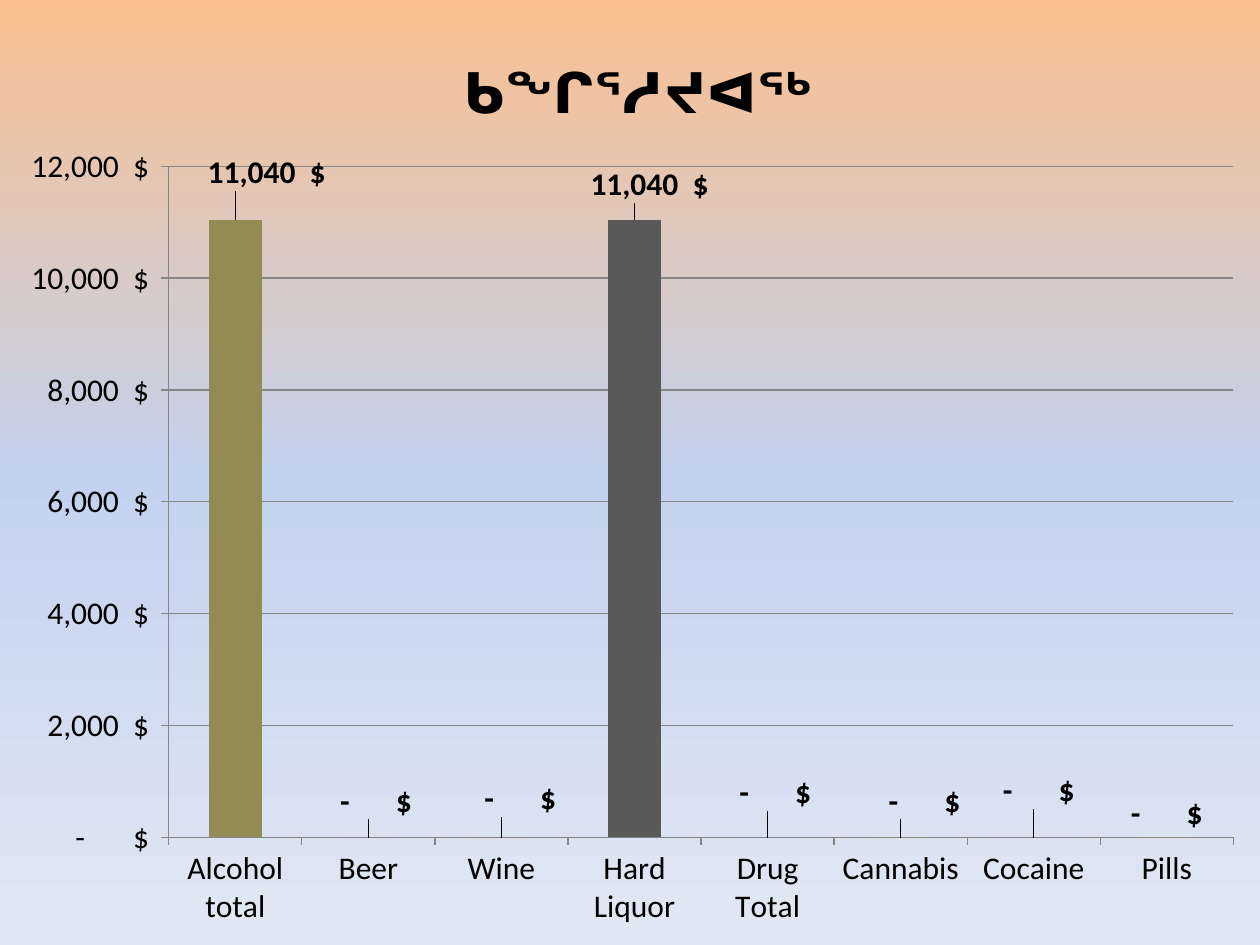
from copy import deepcopy

from lxml import etree
from pptx import Presentation
from pptx.chart.data import CategoryChartData
from pptx.dml.color import RGBColor
from pptx.enum.chart import XL_CHART_TYPE, XL_LABEL_POSITION, XL_TICK_MARK
from pptx.oxml.ns import qn
from pptx.util import Inches, Pt

COLUMNS = XL_CHART_TYPE.COLUMN_CLUSTERED
OUTSIDE_END = XL_LABEL_POSITION.OUTSIDE_END
TICK_OUT = XL_TICK_MARK.OUTSIDE

FONT = "Calibri"
TITLE = "ᑲᖏᕐᓱᔪᐊᖅ"
DOLLARS = (r'_ * #,##0_)\ "$"_ ;_ * \(#,##0\)\ "$"_ ;'
           r'_ * "-"??_)\ "$"_ ;_ @_ ')
COLORS = {
    "text": "000000", "rule": "868686", "default": "4F81BD",
    "top": "FAC090", "middle": "C2D1ED", "bottom": "E1E8F5",
}
BACKGROUND = [(0, "top"), (0.5, "middle"), (1, "bottom")]

# category, dollars, column colour, label shift as a share of the chart
SPENDING = [
    ("Alcohol total", 11040, "948A54", (0.025, -0.025)),
    ("Beer", 0, "604A7B", (0.006, -0.013)),
    ("Wine", 0, "953735", (0.015, -0.016)),
    ("Hard Liquor", 11040, "595959", (0.012, -0.012)),
    ("Drug Total", 0, COLORS["default"], (0.006, -0.022)),
    ("Cannabis", 0, "9BBB59", (0.019, -0.013)),
    ("Cocaine", 0, "8064A2", (0.004, -0.024)),
    ("Pills", 0, "F79646", None),
]
PLOT = {"x": 0.134, "y": 0.176, "w": 0.845, "h": 0.71}
TITLE_PLACE = {"x": 0.36, "y": 0.045}


def rgb(name):
    return RGBColor.from_string(COLORS.get(name, name))


def format_font(font, size=18, bold=False):
    font.name, font.size, font.bold = FONT, Pt(size), bold
    font.color.rgb = rgb("text")


def manual_layout(modes=(), **shares):
    """Return a c:layout element with the given modes and shares."""
    layout = etree.Element(qn("c:layout"))
    manual = etree.SubElement(layout, qn("c:manualLayout"))
    for tag, value in [*modes, *shares.items()]:
        etree.SubElement(manual, qn(f"c:{tag}")).set("val", str(value))
    return layout


def place(parent, layout, after=None):
    """Replace the layout of a chart part, keeping the schema order."""
    for old in parent.findall(qn("c:layout")):
        parent.remove(old)
    if after is None:
        parent.insert(0, layout)
    else:
        parent.find(qn(after)).addnext(layout)


def paint_background(slide):
    fill = slide.background.fill
    fill.gradient()
    fill.gradient_angle = 270
    stop_list = slide.element.xpath(".//a:gsLst")[0]
    stop_list.insert(1, deepcopy(stop_list[0]))
    for stop, (position, color) in zip(fill.gradient_stops, BACKGROUND):
        stop.position = position
        stop.color.rgb = rgb(color)


def format_axes(chart):
    for axis in (chart.category_axis, chart.value_axis):
        axis.major_tick_mark = TICK_OUT
        axis.format.line.color.rgb = rgb("rule")
        format_font(axis.tick_labels.font)
    values = chart.value_axis
    values.minimum_scale, values.maximum_scale, values.major_unit = 0, 12000, 2000
    values.has_major_gridlines = True
    values.major_gridlines.format.line.color.rgb = rgb("rule")
    values.tick_labels.number_format = DOLLARS
    values.tick_labels.number_format_is_linked = False


def format_columns(plot):
    plot.gap_width = 150
    plot.vary_by_categories = False
    series = plot.series[0]
    series.format.fill.solid()
    series.format.fill.fore_color.rgb = rgb("default")
    labels = series.data_labels
    labels.show_value = True
    labels.number_format = DOLLARS
    labels.number_format_is_linked = False
    labels.position = OUTSIDE_END
    format_font(labels.font, bold=True)
    for index, (_, _, color, shift) in enumerate(SPENDING):
        point = series.points[index]
        point.format.fill.solid()
        point.format.fill.fore_color.rgb = rgb(color)
        if shift:
            format_font(point.data_label.font, bold=True)
            point.data_label.position = OUTSIDE_END
            label = series._element.xpath(f"c:dLbls/c:dLbl[c:idx/@val='{index}']")[0]
            place(label, manual_layout(x=shift[0], y=shift[1]), after="c:idx")


def add_spending_chart(slide, width, height):
    data = CategoryChartData(number_format=DOLLARS)
    data.categories = [row[0] for row in SPENDING]
    data.add_series("Series 1", [row[1] for row in SPENDING])
    chart = slide.shapes.add_chart(COLUMNS, 0, 0, width, height, data).chart
    format_font(chart.font)
    chart.has_legend = False
    chart.has_title = True
    heading = chart.chart_title.text_frame
    heading.text = TITLE
    format_font(heading.paragraphs[0].runs[0].font, size=32, bold=True)
    format_axes(chart)
    format_columns(chart.plots[0])

    edges = [("xMode", "edge"), ("yMode", "edge")]
    place(chart.chart_title._element, manual_layout(edges, **TITLE_PLACE), after="c:tx")
    plot_area = chart._chartSpace.xpath("c:chart/c:plotArea")[0]
    place(plot_area, manual_layout([("layoutTarget", "inner"), *edges], **PLOT))


def main():
    deck = Presentation()
    deck.slide_width, deck.slide_height = Inches(10), Inches(7.5)
    slide = deck.slides.add_slide(deck.slide_layouts[6])
    paint_background(slide)
    add_spending_chart(slide, deck.slide_width, deck.slide_height)
    deck.save("out.pptx")


if __name__ == "__main__":
    main()
